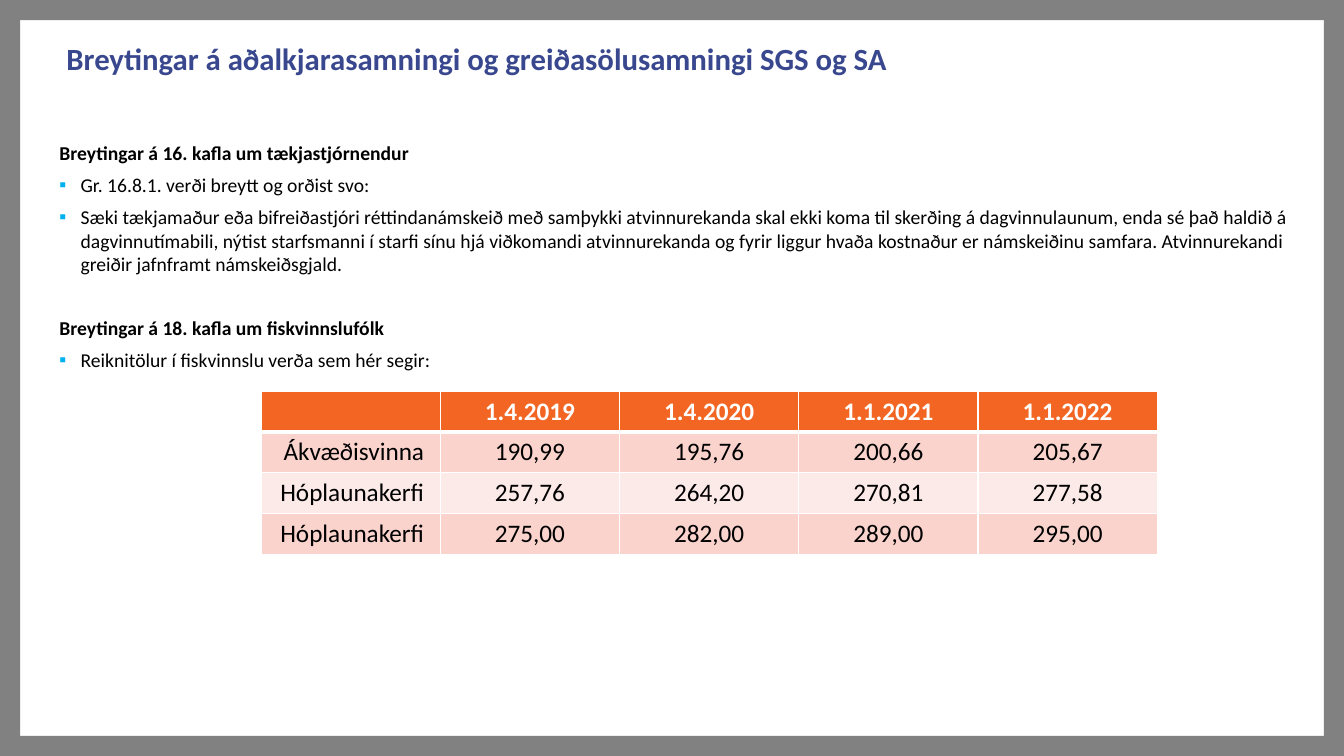
from dataclasses import dataclass

from lxml.etree import SubElement
from pptx import Presentation
from pptx.dml.color import RGBColor
from pptx.enum.shapes import MSO_SHAPE as Shape
from pptx.enum.text import MSO_ANCHOR as Anchor, PP_ALIGN as Align
from pptx.oxml.ns import qn
from pptx.util import Inches, Pt


@dataclass(frozen=True)
class Theme:
    """Colours, font and type sizes of the slide."""
    font: str = "Calibri"
    title_size: int = 22
    body_size: int = 14
    table_size: int = 18
    title: str = "39488E"
    ink: str = "000000"
    white: str = "FFFFFF"
    frame: str = "828181"
    bullet: str = "00B0F0"
    header: str = "F26522"
    bands: tuple = ("FAD3CD", "FCEAE8")


THEME = Theme()
COLUMNS, ROWS = 133.33, 75
MARGIN, BAR = 5.9, 2
TEXT_WIDTH = 122
INDENT = 2.1
TITLE = "Breytingar á aðalkjarasamningi og greiðasölusamningi SGS og SA"
SECTIONS = [
    ("Breytingar á 16. kafla um tækjastjórnendur", [
        "Gr. 16.8.1. verði breytt og orðist svo:",
        "Sæki tækjamaður eða bifreiðastjóri réttindanámskeið með samþykki "
        "atvinnurekanda skal ekki koma til skerðing á dagvinnulaunum, enda sé "
        "það haldið á dagvinnutímabili, nýtist starfsmanni í starfi sínu hjá "
        "viðkomandi atvinnurekanda og fyrir liggur hvaða kostnaður er "
        "námskeiðinu samfara. Atvinnurekandi greiðir jafnframt námskeiðsgjald.",
    ]),
    ("Breytingar á 18. kafla um fiskvinnslufólk", [
        "Reiknitölur í fiskvinnslu verða sem hér segir:",
    ]),
]
RATES = [
    ["", "1.4.2019", "1.4.2020", "1.1.2021", "1.1.2022"],
    ["Ákvæðisvinna", "190,99", "195,76", "200,66", "205,67"],
    ["Hóplaunakerfi", "257,76", "264,20", "270,81", "277,58"],
    ["Hóplaunakerfi", "275,00", "282,00", "289,00", "295,00"],
]


def grid(*steps):
    """Turn grid steps of a tenth of an inch into lengths."""
    return [Inches(step / 10) for step in steps]


def add_span(para, text, size, color, bold=False):
    """Add one formatted run to a paragraph."""
    span = para.add_run()
    span.text = text
    span.font.name = THEME.font
    span.font.size = Pt(size)
    span.font.bold = bold
    span.font.color.rgb = RGBColor.from_string(color)


def add_bar(page, *area):
    """Add one grey bar of the page frame."""
    bar = page.shapes.add_shape(Shape.RECTANGLE, *grid(*area))
    bar.shadow.inherit = False
    bar.fill.solid()
    bar.fill.fore_color.rgb = RGBColor.from_string(THEME.frame)
    bar.line.fill.background()


def add_frame(page):
    """Frame the page with four bars."""
    add_bar(page, 0, 0, COLUMNS, BAR)
    add_bar(page, 0, ROWS - BAR, COLUMNS, BAR)
    add_bar(page, 0, 0, BAR, ROWS)
    add_bar(page, COLUMNS - BAR, 0, BAR, ROWS)


def add_text_frame(page, *area):
    """Add a wrapping text box without insets and return its text frame."""
    frame = page.shapes.add_textbox(*grid(*area)).text_frame
    frame.word_wrap = True
    frame.margin_left = frame.margin_right = 0
    frame.margin_top = frame.margin_bottom = 0
    return frame


def add_bullet(para):
    """Give a paragraph a coloured square bullet and a hanging indent."""
    props = para._p.get_or_add_pPr()
    indent = grid(INDENT)[0]
    props.set("marL", str(indent))
    props.set("indent", str(-indent))
    color = SubElement(props, qn("a:buClr"))
    SubElement(color, qn("a:srgbClr"), val=THEME.bullet)
    SubElement(props, qn("a:buFont"), typeface=THEME.font)
    SubElement(props, qn("a:buChar"), char="▪")


def add_sections(page, *area):
    """Write the headings with their bullet points."""
    frame = add_text_frame(page, *area)
    for number, (heading, points) in enumerate(SECTIONS):
        para = frame.add_paragraph() if number else frame.paragraphs[0]
        para.space_after = Pt(6)
        if number:
            para.space_before = Pt(23)
        add_span(para, heading, THEME.body_size, THEME.ink, bold=True)
        for point in points:
            para = frame.add_paragraph()
            para.space_after = Pt(6)
            add_bullet(para)
            add_span(para, point, THEME.body_size, THEME.ink)


def add_borders(cell, top, bottom):
    """Draw white cell borders, with the top and bottom widths in points."""
    props = cell._tc.get_or_add_tcPr()
    for side, width in (("L", 1), ("R", 1), ("T", top), ("B", bottom)):
        line = SubElement(props, qn(f"a:ln{side}"), w=str(Pt(width)))
        fill = SubElement(line, qn("a:solidFill"))
        SubElement(fill, qn("a:srgbClr"), val=THEME.white)


def fill_cell(cell, text, row, column):
    """Style one table cell by its row and column and write its text."""
    header = row == 0
    add_borders(cell, 3 if row == 1 else 1, 3 if header else 1)
    cell.fill.solid()
    color = THEME.header if header else THEME.bands[(row - 1) % 2]
    cell.fill.fore_color.rgb = RGBColor.from_string(color)
    cell.vertical_anchor = Anchor.TOP
    para = cell.text_frame.paragraphs[0]
    para.alignment = Align.CENTER if column else Align.RIGHT
    if not column:
        cell.margin_right = grid(1.6)[0]
    if text:
        add_span(para, text, THEME.table_size,
                 THEME.white if header else THEME.ink, bold=header)
    else:
        para.font.size = Pt(THEME.table_size)


def add_rates(page, *area):
    """Add the table of rates with equal columns and rows."""
    shape = page.shapes.add_table(len(RATES), len(RATES[0]), *grid(*area))
    for row, texts in enumerate(RATES):
        for column, text in enumerate(texts):
            fill_cell(shape.table.cell(row, column), text, row, column)


def main():
    """Build the slide and save it."""
    deck = Presentation()
    deck.slide_width, deck.slide_height = grid(COLUMNS, ROWS)
    page = deck.slides.add_slide(deck.slide_layouts[6])
    add_frame(page)
    title = add_text_frame(page, MARGIN + 0.7, 3.9, TEXT_WIDTH - 0.7, 4.8)
    add_span(title.paragraphs[0], TITLE, THEME.title_size, THEME.title, bold=True)
    add_sections(page, MARGIN, 14, TEXT_WIDTH, 52.4)
    add_rates(page, 25.9, 38.8, 88.9, 16.2)
    deck.save("out.pptx")


if __name__ == "__main__":
    main()
